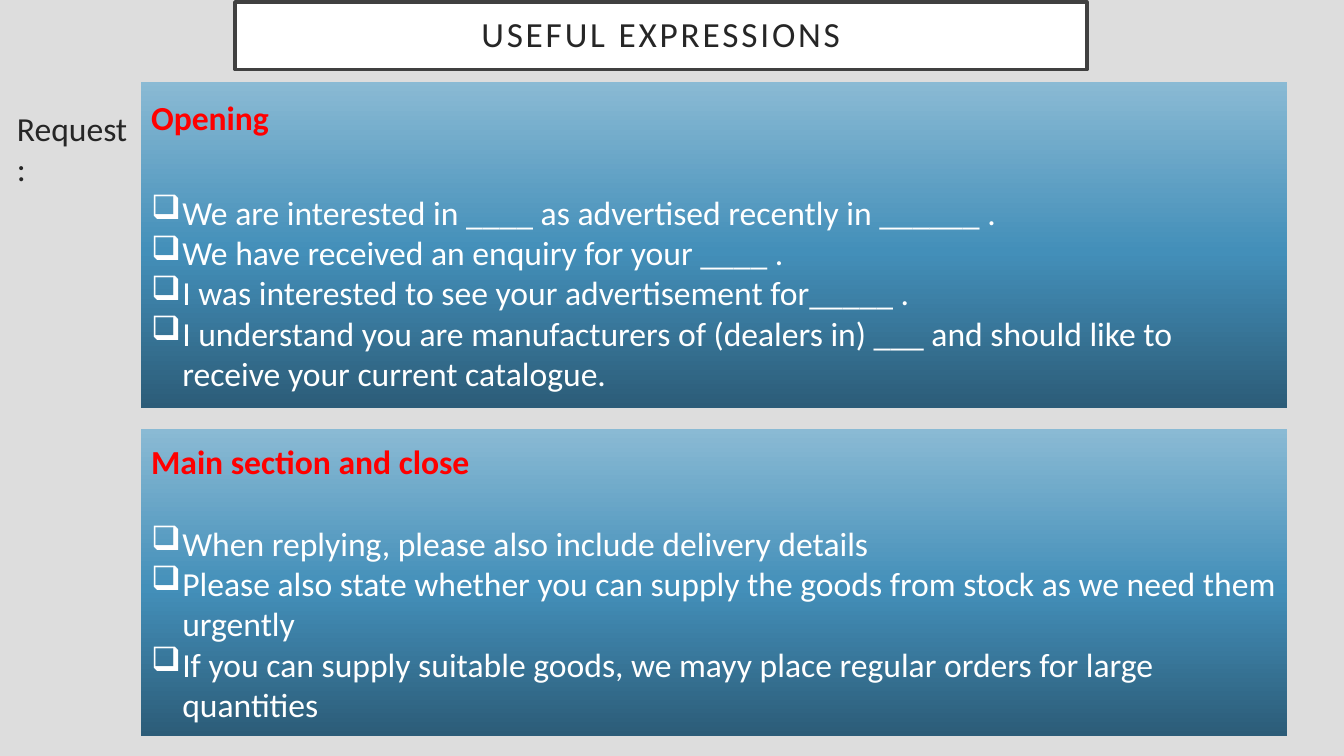
from lxml.etree import SubElement
from pptx import Presentation
from pptx.dml.color import RGBColor as Color
from pptx.enum.shapes import MSO_SHAPE as Shape
from pptx.enum.text import MSO_ANCHOR as Anchor, PP_ALIGN as Align
from pptx.oxml import parse_xml
from pptx.oxml.ns import nsdecls, qn
from pptx.util import Inches, Pt

TITLE = "USEFUL EXPRESSIONS"
LABEL = "Request:"
PANELS = [
    {
        "heading": "Opening",
        "top": 0.81,
        "height": 3.24,
        "gap": 39,
        "phrases": [
            "We are interested in ____ as advertised recently in ______ .",
            "We have received an enquiry for your ____ .",
            "I was interested to see your advertisement for_____ .",
            "I understand you are manufacturers of (dealers in) ___ and should like to receive your current catalogue.",
        ],
    },
    {
        "heading": "Main section and close",
        "top": 4.26,
        "height": 3.04,
        "gap": 29.3,
        "phrases": [
            "When replying, please also include delivery details",
            "Please also state whether you can supply the goods from stock as we need them urgently",
            "If you can supply suitable goods, we mayy place regular orders for large quantities",
        ],
    },
]
THEME = {
    "background": "DDDDDD",
    "title_fill": "FFFFFF",
    "title_line": "404040",
    "gradient": [(0, "2C5C78"), (48, "438FB9"), (100, "8ABAD4")],
    "title": {"size": Pt(25.2), "color": "262626"},
    "label": {"size": Pt(24), "color": "262626"},
    "heading": {"size": Pt(24), "color": "FF0000", "bold": True},
    "phrase": {"size": Pt(24), "color": "FFFFFF"},
}
PANEL_LEFT, PANEL_WIDTH = 1.4, 11.37
BULLET, BULLET_INDENT = "❑", Inches(0.31)


def write(paragraph, text, style):
    run = paragraph.add_run()
    run.text = text
    run.font.name = "Calibri"
    for name, value in THEME[style].items():
        if name == "color":
            run.font.color.rgb = Color.from_string(value)
        else:
            setattr(run.font, name, value)
    return run


def add_box(slide, left, top, width, height):
    shape = slide.shapes.add_shape(
        Shape.RECTANGLE, Inches(left), Inches(top), Inches(width), Inches(height))
    shape.shadow.inherit = False
    shape.text_frame.word_wrap = True
    shape.text_frame.vertical_anchor = Anchor.MIDDLE
    return shape


def fill_gradient(shape):
    stops = "".join(
        f'<a:gs pos="{position * 1000}"><a:srgbClr val="{color}"/></a:gs>'
        for position, color in THEME["gradient"])
    gradient = parse_xml(
        f'<a:gradFill {nsdecls("a")} rotWithShape="1"><a:gsLst>{stops}</a:gsLst>'
        '<a:lin ang="16200000" scaled="0"/></a:gradFill>')
    shape._element.spPr.find(qn("a:prstGeom")).addnext(gradient)


def add_bullet(paragraph):
    properties = paragraph._p.get_or_add_pPr()
    properties.set("marL", str(BULLET_INDENT))
    properties.set("indent", str(-BULLET_INDENT))
    SubElement(properties, qn("a:buChar"), char=BULLET)


def add_title(slide):
    shape = add_box(slide, 2.33, 0.02, 8.45, 0.67)
    shape.fill.solid()
    shape.fill.fore_color.rgb = Color.from_string(THEME["title_fill"])
    shape.line.color.rgb = Color.from_string(THEME["title_line"])
    shape.line.width = Pt(2.5)
    for side in ("left", "top", "right", "bottom"):
        setattr(shape.text_frame, f"margin_{side}", Inches(0.2))
    paragraph = shape.text_frame.paragraphs[0]
    paragraph.alignment = Align.CENTER
    paragraph.line_spacing = 0.9
    run = write(paragraph, TITLE, "title")
    run.font._element.set("spc", "200")


def add_label(slide):
    shape = slide.shapes.add_textbox(Inches(0.07), Inches(1.02), Inches(1.33), Inches(0.5))
    shape.text_frame.word_wrap = False
    write(shape.text_frame.paragraphs[0], LABEL, "label")


def add_panel(slide, panel):
    shape = add_box(slide, PANEL_LEFT, panel["top"], PANEL_WIDTH, panel["height"])
    fill_gradient(shape)
    shape.line.fill.background()
    heading = shape.text_frame.paragraphs[0]
    heading.alignment = Align.LEFT
    heading.space_after = Pt(panel["gap"])
    write(heading, panel["heading"], "heading")
    for phrase in panel["phrases"]:
        paragraph = shape.text_frame.add_paragraph()
        paragraph.alignment = Align.LEFT
        add_bullet(paragraph)
        write(paragraph, phrase, "phrase")


def main():
    presentation = Presentation()
    presentation.slide_width = Inches(13.33)
    presentation.slide_height = Inches(7.5)
    slide = presentation.slides.add_slide(presentation.slide_layouts[6])
    slide.background.fill.solid()
    slide.background.fill.fore_color.rgb = Color.from_string(THEME["background"])
    add_title(slide)
    add_label(slide)
    for panel in PANELS:
        add_panel(slide, panel)
    presentation.save("out.pptx")


if __name__ == "__main__":
    main()
